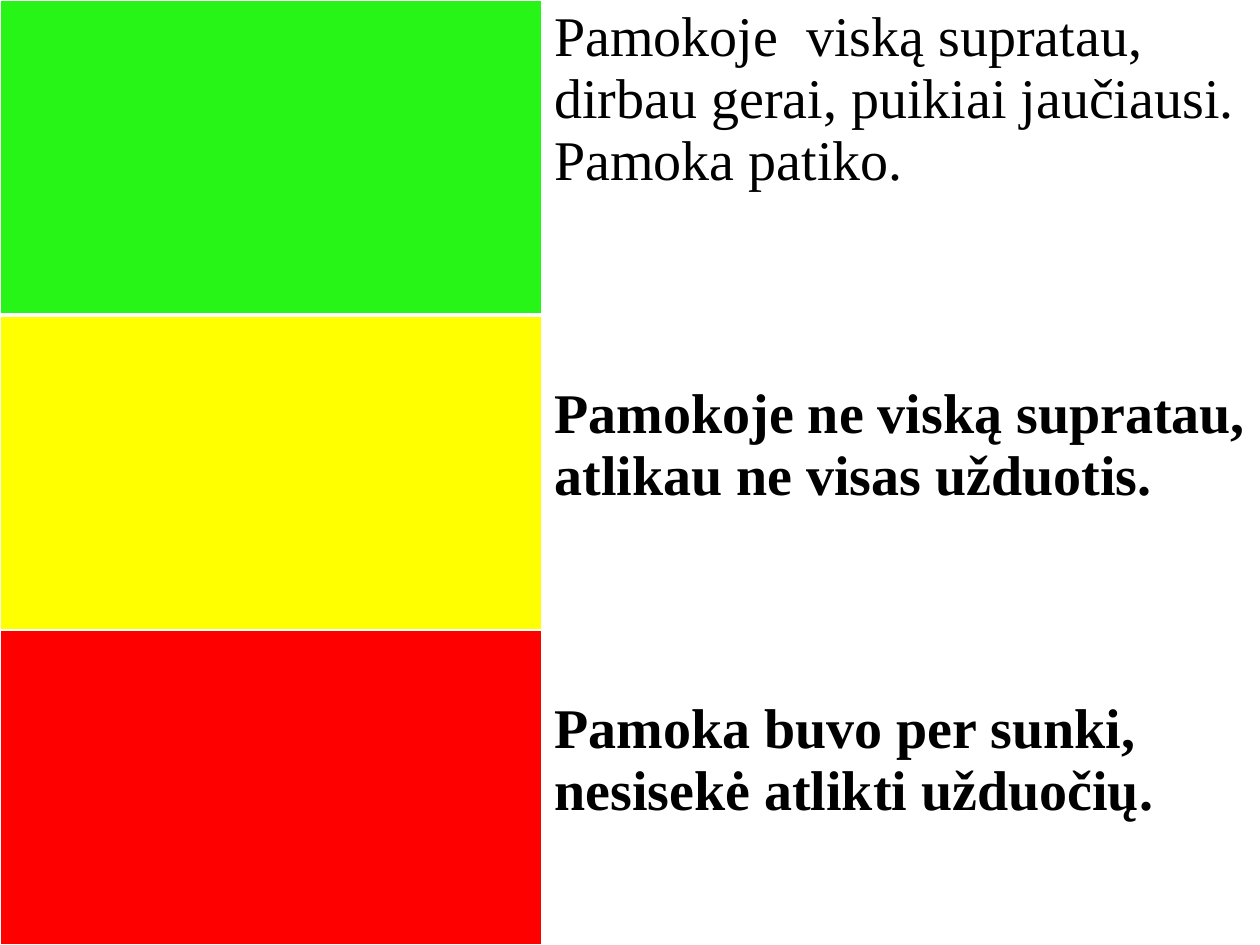
from dataclasses import dataclass

from lxml.etree import SubElement
from pptx import Presentation
from pptx.dml.color import RGBColor as Rgb
from pptx.oxml.ns import qn
from pptx.table import Table, _Cell as Cell
from pptx.util import Inches, Pt


@dataclass(frozen=True)
class Theme:
    """Colours, type and line widths of the traffic light."""
    go: str = "27F517"
    caution: str = "FFFF00"
    stop: str = "FF0000"
    paper: str = "FFFFFF"
    ink: str = "000000"
    font: str = "Times New Roman"
    size: int = 32
    thin: int = 1
    thick: int = 3


@dataclass(frozen=True)
class Light:
    """One signal colour with its meaning for the lesson."""
    colour: str
    meaning: str
    bold: bool = True
    top: float = 0.54
    underline: int = Theme.thin


THEME = Theme()
WIDTH, HEIGHT = Inches(10), Inches(7.5)
COLUMN_SHARES = (0.43, 0.57)
LIGHTS = (
    Light(THEME.go, "Pamokoje  viską supratau, dirbau gerai, puikiai jaučiausi. Pamoka patiko.",
          bold=False, top=0.05, underline=THEME.thick),
    Light(THEME.caution, "Pamokoje ne viską supratau, atlikau ne visas užduotis."),
    Light(THEME.stop, "Pamoka buvo per sunki, nesisekė atlikti užduočių."),
)


def paint(cell: Cell, colour: str, underline: int) -> None:
    """Give a cell its borders and fill."""
    properties = cell._tc.get_or_add_tcPr()
    for side in "LRTB":
        points = underline if side == "B" else THEME.thin
        border = SubElement(properties, qn(f"a:ln{side}"), w=str(Pt(points)))
        SubElement(SubElement(border, qn("a:solidFill")), qn("a:srgbClr"), val=THEME.paper)
    cell.fill.solid()
    cell.fill.fore_color.rgb = Rgb.from_string(colour)


def write(cell: Cell, light: Light) -> None:
    """Write the meaning of a light into a cell."""
    cell.margin_top = Inches(light.top)
    cell.text = light.meaning
    font = cell.text_frame.paragraphs[0].font
    font.name, font.size, font.bold = THEME.font, Pt(THEME.size), light.bold
    font.color.rgb = Rgb.from_string(THEME.ink)


def draw_light(table: Table, row: int, light: Light) -> None:
    """Fill one table row with a signal and its meaning."""
    signal, meaning = table.cell(row, 0), table.cell(row, 1)
    paint(signal, light.colour, light.underline)
    paint(meaning, THEME.paper, light.underline)
    write(meaning, light)


def main() -> None:
    """Build and save the slide."""
    deck = Presentation()
    deck.slide_width, deck.slide_height = WIDTH, HEIGHT
    slide = deck.slides.add_slide(deck.slide_layouts[6])
    table = slide.shapes.add_table(len(LIGHTS), len(COLUMN_SHARES), 0, 0, WIDTH, HEIGHT).table
    table.first_row = table.horz_banding = False
    for column, share in zip(table.columns, COLUMN_SHARES):
        column.width = round(WIDTH * share)
    for row, light in enumerate(LIGHTS):
        draw_light(table, row, light)
    deck.save("out.pptx")


if __name__ == "__main__":
    main()
